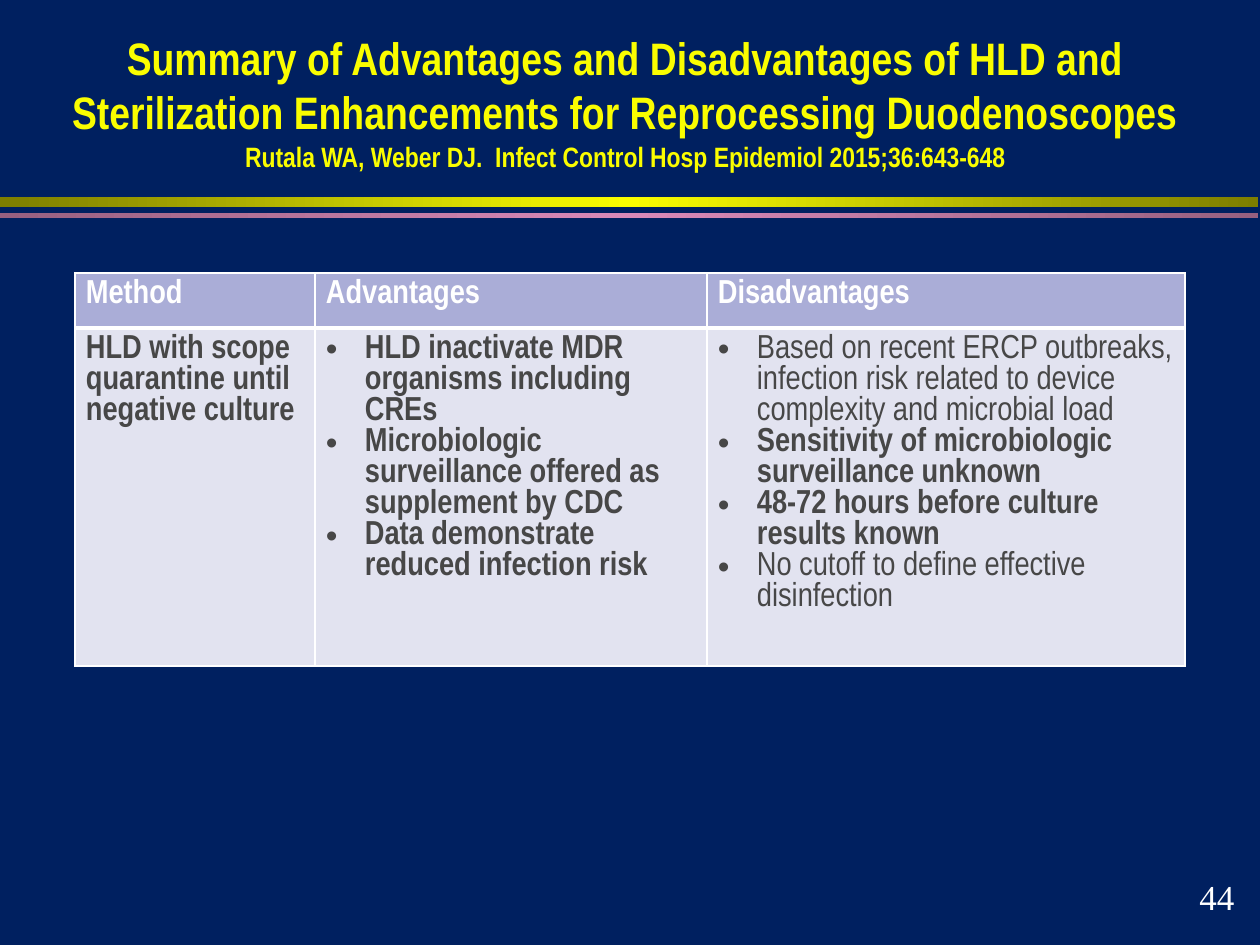
import copy
from dataclasses import dataclass

import lxml.etree
import pptx
import pptx.dml.color
import pptx.enum.shapes
import pptx.enum.text
import pptx.oxml.ns
import pptx.util

EMU_PER_PX = 914400 / 126


def px(length):
    return pptx.util.Emu(round(length * EMU_PER_PX))


def rgb(value):
    return pptx.dml.color.RGBColor.from_string(value)


def add_xml(parent, tag, **attributes):
    return lxml.etree.SubElement(parent, pptx.oxml.ns.qn(tag), attributes)


@dataclass(frozen=True)
class Theme:
    background: str = "002060"
    title: str = "FAFD00"
    yellow_band: tuple = ("7D7E00", "FAFD00", "7D7E00")
    pink_band: tuple = ("976080", "D989B8", "976080")
    header_fill: str = "AAADD7"
    body_fill: str = "E2E3F0"
    white: str = "FFFFFF"
    body_text: str = "474747"
    font: str = "Arial Narrow"
    number_font: str = "Times New Roman"
    title_size: int = 26
    citation_size: int = 16
    table_size: int = 19
    number_size: int = 20


class SlideBuilder:
    def __init__(self, slide, theme):
        self.slide = slide
        self.theme = theme
        slide.background.fill.solid()
        slide.background.fill.fore_color.rgb = rgb(theme.background)

    def style(self, paragraph, size, color, bold=True, font=None):
        paragraph.font.name = font or self.theme.font
        paragraph.font.size = pptx.util.Pt(size)
        paragraph.font.bold = bold
        paragraph.font.color.rgb = rgb(color)

    def band(self, top, height, colors):
        band = self.slide.shapes.add_shape(
            pptx.enum.shapes.MSO_SHAPE.RECTANGLE, 0, px(top), px(1258), px(height))
        band.shadow.inherit = False
        band.line.fill.background()
        band.fill.gradient()
        band.fill.gradient_angle = 0
        # The default gradient has two stops; a middle one is added
        first = band.fill._fill._gradFill.gsLst[0]
        first.addnext(copy.deepcopy(first))
        for stop, position, color in zip(band.fill.gradient_stops, (0, 0.5, 1), colors):
            stop.position = position
            stop.color.rgb = rgb(color)

    def title(self, heading, citation, left, top, width, height):
        title = self.slide.shapes.title
        title.left, title.top, title.width, title.height = map(px, (left, top, width, height))
        frame = title.text_frame
        frame.word_wrap = True
        frame.auto_size = pptx.enum.text.MSO_AUTO_SIZE.NONE
        frame.vertical_anchor = pptx.enum.text.MSO_ANCHOR.BOTTOM
        paragraph = frame.paragraphs[0]
        paragraph.alignment = pptx.enum.text.PP_ALIGN.CENTER
        self.style(paragraph, self.theme.title_size, self.theme.title)
        paragraph.add_run().text = heading
        paragraph.add_line_break()
        source = paragraph.add_run()
        source.text = citation
        source.font.size = pptx.util.Pt(self.theme.citation_size)

    def cell(self, cell, points, fill, color, borders, bulleted):
        cell.margin_left = cell.margin_right = px(11)
        cell.margin_top = cell.margin_bottom = px(6)
        properties = cell._tc.get_or_add_tcPr()
        for side, width in borders.items():
            line = add_xml(properties, f"a:ln{side}", w=str(pptx.util.Pt(width)))
            add_xml(add_xml(line, "a:solidFill"), "a:srgbClr", val=self.theme.white)
        cell.fill.solid()
        cell.fill.fore_color.rgb = rgb(fill)
        frame = cell.text_frame
        for index, (text, bold) in enumerate(points):
            paragraph = frame.add_paragraph() if index else frame.paragraphs[0]
            paragraph.text = text
            if bulleted:
                layout = paragraph._p.get_or_add_pPr()
                layout.set("marL", str(px(39)))
                layout.set("indent", str(-px(39)))
                add_xml(layout, "a:buFont", typeface="Arial")
                add_xml(layout, "a:buChar", char="•")
            self.style(paragraph, self.theme.table_size, color, bold)

    def table(self, left, top, widths, heights, headers, body):
        table = self.slide.shapes.add_table(
            2, len(widths), px(left), px(top), px(sum(widths)), px(sum(heights))).table
        for column, width in zip(table.columns, widths):
            column.width = px(width)
        for row, height in zip(table.rows, heights):
            row.height = px(height)
        theme = self.theme
        for index, (header, points) in enumerate(zip(headers, body)):
            self.cell(table.cell(0, index), [(header, True)], theme.header_fill,
                      theme.white, dict(L=1, R=1, T=1, B=3), False)
            self.cell(table.cell(1, index), points, theme.body_fill,
                      theme.body_text, dict(L=1, R=1, T=3, B=1), index > 0)

    def page_number(self, number, left, top, width, height):
        box = self.slide.shapes.add_textbox(*map(px, (left, top, width, height)))
        box.text_frame.word_wrap = False
        paragraph = box.text_frame.paragraphs[0]
        paragraph.text = number
        self.style(paragraph, self.theme.number_size, self.theme.white,
                   False, self.theme.number_font)


def main():
    presentation = pptx.Presentation()
    presentation.slide_width = px(1260)
    presentation.slide_height = px(945)
    theme = Theme()
    title_only = presentation.slide_layouts[5]
    builder = SlideBuilder(presentation.slides.add_slide(title_only), theme)

    # Divider bands
    builder.band(197, 10, theme.yellow_band)
    builder.band(213, 5, theme.pink_band)

    # Title and citation
    builder.title(
        "Summary of Advantages and Disadvantages of HLD and Sterilization "
        "Enhancements for Reprocessing Duodenoscopes",
        "Rutala WA, Weber DJ.  Infect Control Hosp Epidemiol 2015;36:643-648",
        56, 21, 1139, 158)

    # Comparison table: each point is a text and whether it is bold
    method = [("HLD with scope quarantine until negative culture", True)]
    advantages = [
        ("HLD inactivate MDR organisms including CREs", True),
        ("Microbiologic surveillance offered as supplement by CDC", True),
        ("Data demonstrate reduced infection risk", True),
    ]
    disadvantages = [
        ("Based on recent ERCP outbreaks, infection risk related to device "
         "complexity and microbial load", False),
        ("Sensitivity of microbiologic surveillance unknown", True),
        ("48-72 hours before culture results known", True),
        ("No cutoff to define effective disinfection", False),
    ]
    builder.table(75, 273, (240, 392, 478), (55, 338),
                  ("Method", "Advantages", "Disadvantages"),
                  (method, advantages, disadvantages))

    # Page number
    builder.page_number("44", 1187, 869, 60, 55)

    presentation.save("out.pptx")


if __name__ == "__main__":
    main()
